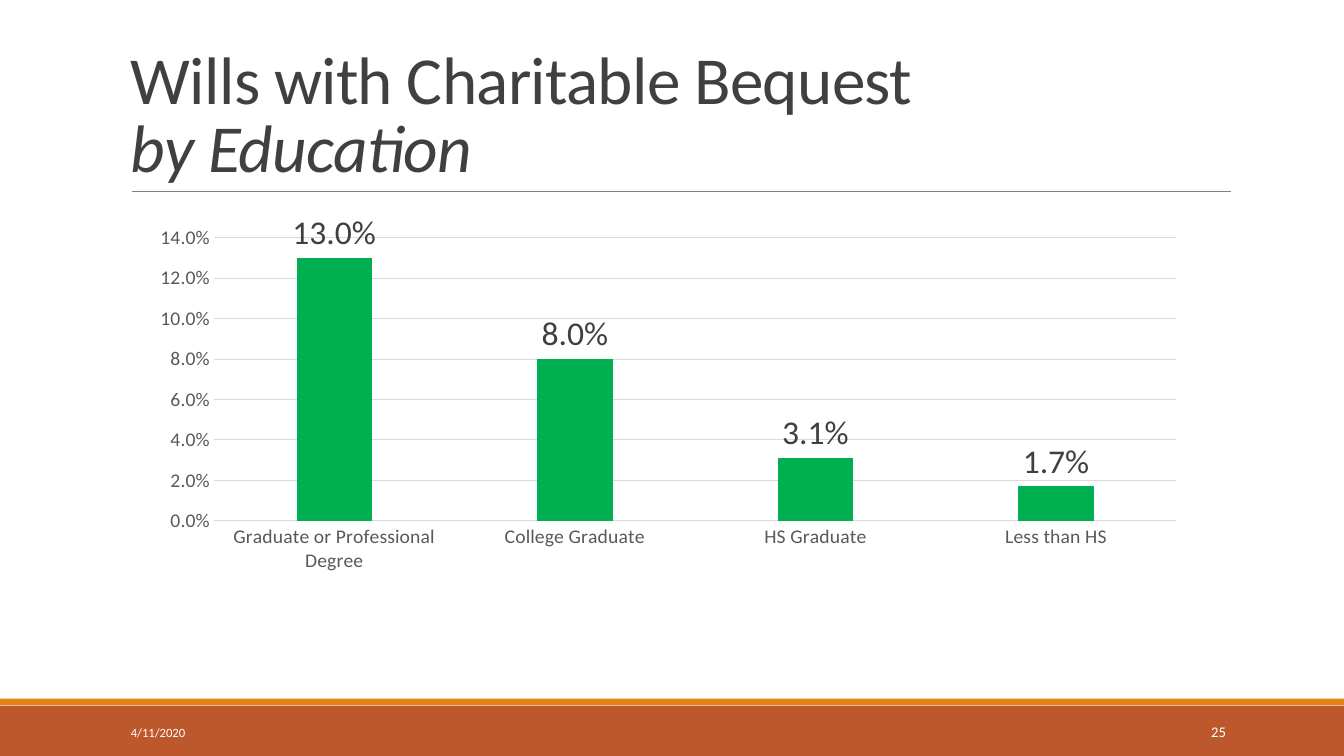
"""Build the slide on wills with a charitable bequest by education."""
from lxml import etree
from pptx import Presentation
from pptx.chart.data import CategoryChartData
from pptx.dml.color import RGBColor
from pptx.enum import chart as ch, shapes, text
from pptx.oxml.ns import qn
from pptx.util import Pt

FONT = "Calibri"
WHITE = RGBColor(0xFF, 0xFF, 0xFF)
RUST = RGBColor(0xBD, 0x58, 0x2C)
ORANGE = RGBColor(0xE4, 0x83, 0x12)
GREEN = RGBColor(0x00, 0xB0, 0x50)
DARK = RGBColor(0x40, 0x40, 0x40)
MID = RGBColor(0x59, 0x59, 0x59)
RULE = RGBColor(0x80, 0x80, 0x80)
GRID = RGBColor(0xD9, 0xD9, 0xD9)
BEQUESTS = {
    "Graduate or Professional Degree": 0.13,
    "College Graduate": 0.08,
    "HS Graduate": 0.031,
    "Less than HS": 0.017,
}


def add_text(s, lines, x, y, w, h, size, color, align=text.PP_ALIGN.LEFT,
             anchor=text.MSO_ANCHOR.MIDDLE, leading=None, spacing=None, italic_lines=()):
    tf = s.shapes.add_textbox(Pt(x), Pt(y), Pt(w), Pt(h)).text_frame
    tf.word_wrap = True
    tf.vertical_anchor = anchor
    p = tf.paragraphs[0]
    p.alignment = align
    p.line_spacing = leading
    for i, line in enumerate(lines):
        if i:
            p.add_line_break()
        r = p.add_run()
        r.text = line
        r.font.name, r.font.size = FONT, Pt(size)
        r.font.color.rgb = color
        if i in italic_lines:
            r.font.italic = True
        if spacing is not None:
            r.font._element.set("spc", str(round(spacing * 100)))


def add_band(s, x, y, w, h, color):
    sp = s.shapes.add_shape(shapes.MSO_SHAPE.RECTANGLE, Pt(x), Pt(y), Pt(w), Pt(h))
    sp.shadow.inherit = False
    sp.fill.solid()
    sp.fill.fore_color.rgb = color
    sp.line.fill.background()


def add_header(s, x, y, w, h):
    add_text(s, ["Wills with Charitable Bequest", "by Education"], x, y, w, h, 48, DARK,
             anchor=text.MSO_ANCHOR.BOTTOM, leading=0.85, spacing=-0.5, italic_lines=(1,))
    rule = s.shapes.add_connector(shapes.MSO_CONNECTOR.STRAIGHT,
                                  Pt(x + 8), Pt(y + h), Pt(x + w + 0.7), Pt(y + h))
    rule.line.color.rgb = RULE
    rule.line.width = Pt(0.5)
    etree.SubElement(rule._element.spPr, qn("a:effectLst"))


def style_font(font, size, color):
    font.name, font.size = FONT, Pt(size)
    font.color.rgb = color


def add_bequest_chart(s, x, y, w, h):
    data = CategoryChartData(number_format="0.0%")
    data.categories = list(BEQUESTS)
    data.add_series("Series 1", list(BEQUESTS.values()))
    chart = s.shapes.add_chart(ch.XL_CHART_TYPE.COLUMN_CLUSTERED,
                               Pt(x), Pt(y), Pt(w), Pt(h), data).chart
    chart.has_legend = chart.has_title = False
    style_font(chart.font, 14, MID)

    for axis in (chart.category_axis, chart.value_axis):
        axis.major_tick_mark = axis.minor_tick_mark = ch.XL_TICK_MARK.NONE
        style_font(axis.tick_labels.font, 14, MID)
    values = chart.value_axis
    values.tick_labels.number_format = "0.0%"
    values.tick_labels.number_format_is_linked = False
    values.minimum_scale, values.maximum_scale, values.major_unit = 0, 0.14, 0.02
    values.format.line.fill.background()
    for line in (chart.category_axis.format.line, values.major_gridlines.format.line):
        line.color.rgb = GRID
        line.width = Pt(0.75)

    plot = chart.plots[0]
    plot.gap_width, plot.overlap = 219, -27
    plot.vary_by_categories = False
    series = plot.series[0]
    series.format.fill.solid()
    series.format.fill.fore_color.rgb = GREEN
    labels = series.data_labels
    labels.show_value = True
    labels.position = ch.XL_LABEL_POSITION.OUTSIDE_END
    labels.number_format, labels.number_format_is_linked = "0.0%", False
    style_font(labels.font, 24, DARK)


def add_footer(s, x, y, w, h):
    add_band(s, x, y + 5, w, h - 5, RUST)
    add_band(s, x, y, w, 4.75, ORANGE)
    add_text(s, ["4/11/2020"], x + 86.4, y + 9.5, 194.4, 28.8, 9, WHITE)
    add_text(s, ["25"], x + 779.8, y + 9.5, 103, 28.8, 10.5, WHITE,
             align=text.PP_ALIGN.RIGHT)


def main():
    prs = Presentation()
    prs.slide_width, prs.slide_height = Pt(960), Pt(540)
    s = prs.slides.add_slide(prs.slide_layouts[6])
    add_footer(s, 0, 499, 960, 41)
    add_header(s, 86.4, 22.5, 792, 114.2)
    add_bequest_chart(s, 99.4, 152.6, 756, 261.4)
    prs.save("out.pptx")


if __name__ == "__main__":
    main()
